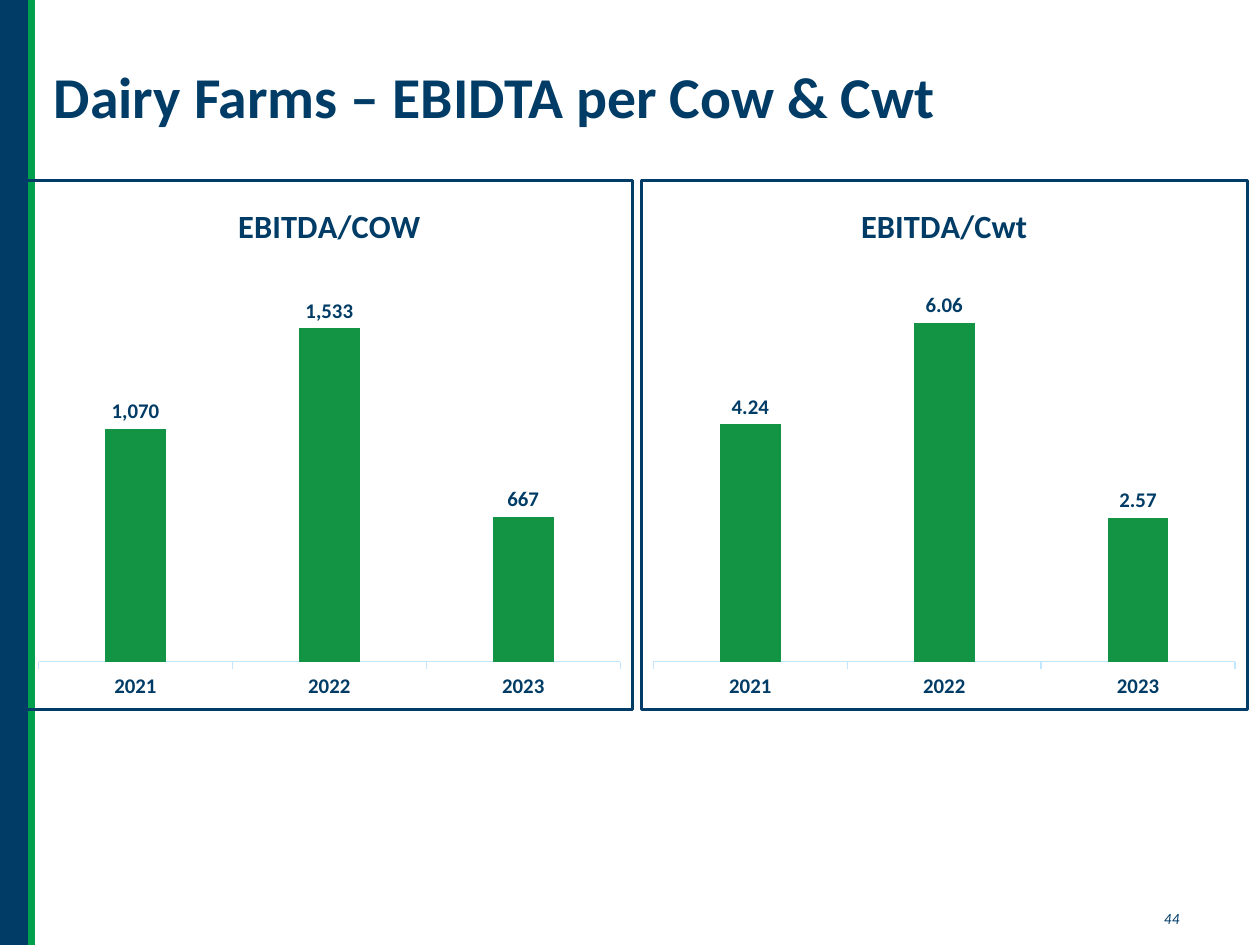
from lxml import etree
from pptx import Presentation
from pptx.chart.data import CategoryChartData as Data
from pptx.dml.color import RGBColor
from pptx.enum.chart import XL_CHART_TYPE as Kind, XL_LABEL_POSITION as Spot
from pptx.enum.chart import XL_TICK_LABEL_POSITION as Tick, XL_TICK_MARK as Mark
from pptx.enum.shapes import MSO_CONNECTOR as Wire, MSO_SHAPE as Form
from pptx.enum.text import MSO_ANCHOR as Anchor
from pptx.oxml import parse_xml
from pptx.oxml.ns import nsdecls, qn
from pptx.util import Inches, Pt

NAVY, GREEN, BAR, PALE = "003C66", "009F4D", "139445", "C2E6FF"
WIDE, HIGH = 10, 7.5
PLOT = {"x": 0.02, "y": 0.17, "w": 0.96, "h": 0.74}


def tint(code):
    return RGBColor.from_string(code)


class Page:
    def __init__(self, deck):
        self.deck = deck
        deck.slide_width, deck.slide_height = Inches(WIDE), Inches(HIGH)
        self.shapes = deck.slides.add_slide(deck.slide_layouts[6]).shapes

    def span(self, *parts):
        sizes = (self.deck.slide_width, self.deck.slide_height) * 2
        return [int(size * part) for size, part in zip(sizes, parts)]

    def style(self, font, size, bold=True, face="Calibri"):
        font.name, font.size, font.bold = face, Pt(size), bold
        font.color.rgb = tint(NAVY)

    def block(self, box, code):
        shape = self.shapes.add_shape(Form.RECTANGLE, *self.span(*box))
        shape.shadow.inherit = False
        shape.fill.solid()
        shape.fill.fore_color.rgb = tint(code)
        shape.line.fill.background()

    def line(self, ends, code, width):
        wire = self.shapes.add_connector(Wire.STRAIGHT, *self.span(*ends))
        wire.line.color.rgb = tint(code)
        wire.line.width = Pt(width)
        etree.SubElement(wire.element.spPr, qn("a:effectLst"))

    def text(self, box, words, size, bold=True, face="Calibri", slant=False):
        frame = self.shapes.add_textbox(*self.span(*box)).text_frame
        frame.word_wrap = True
        frame.vertical_anchor = Anchor.MIDDLE
        para = frame.paragraphs[0]
        para.text = words
        para.line_spacing = 0.9
        self.style(para.font, size, bold, face)
        para.font.italic = slant

    def chart(self, box, name, vals, top, form):
        data = Data(number_format=form)
        data.categories = ["2021", "2022", "2023"]
        data.add_series(name, vals)
        chart = self.shapes.add_chart(Kind.COLUMN_CLUSTERED, *self.span(*box), data).chart
        self.style(chart.font, 10, False)
        chart.has_legend = False
        chart.has_title = True
        para = chart.chart_title.text_frame.paragraphs[0]
        para.text = name
        self.style(para.font, 18.6)
        chart.chart_title.include_in_layout = False
        self.axes(chart, top)
        self.bars(chart.plots[0], form)
        self.frame(chart)

    def axes(self, chart, top):
        years, scale = chart.category_axis, chart.value_axis
        self.style(years.tick_labels.font, 12)
        years.major_tick_mark = Mark.OUTSIDE
        years.tick_label_position = Tick.LOW
        years.format.line.color.rgb = tint(PALE)
        years.format.line.width = Pt(0.75)
        scale.minimum_scale, scale.maximum_scale = 0, top
        scale.has_major_gridlines = False
        scale.visible = False

    def bars(self, plot, form):
        plot.gap_width, plot.overlap = 219, -27
        plot.vary_by_categories = False
        fill = plot.series[0].format.fill
        fill.solid()
        fill.fore_color.rgb = tint(BAR)
        plot.has_data_labels = True
        labels = plot.data_labels
        labels.show_value = True
        labels.position = Spot.OUTSIDE_END
        labels.number_format = form
        labels.number_format_is_linked = False
        self.style(labels.font, 12)

    def frame(self, chart):
        root = chart.element
        border = parse_xml(
            f'<c:spPr {nsdecls("c", "a")}><a:noFill/><a:ln w="{Pt(1.5)}"><a:solidFill>'
            f'<a:srgbClr val="{NAVY}"/></a:solidFill></a:ln></c:spPr>')
        root.find(qn("c:txPr")).addprevious(border)
        area = root.find(".//" + qn("c:plotArea"))
        for old in area.findall(qn("c:layout")):
            area.remove(old)
        rules = "".join(f'<c:{key} val="{val}"/>' for key, val in PLOT.items())
        area.insert(0, parse_xml(
            f'<c:layout {nsdecls("c")}><c:manualLayout><c:layoutTarget val="inner"/>'
            f'<c:xMode val="edge"/><c:yMode val="edge"/>{rules}</c:manualLayout></c:layout>'))


def main():
    deck = Presentation()
    page = Page(deck)
    edge = 0.25 / WIDE
    page.text((9.14 / WIDE, 7.18 / HIGH, 0.45 / WIDE, 0.24 / HIGH), "44", 8, False, "Lato", True)
    page.block((0, 0, edge, 1), NAVY)
    page.line((edge, 0, edge, 1), GREEN, 4.5)
    page.text((0.33 / WIDE, 0.33 / HIGH, 0.95, 0.92 / HIGH), "Dairy Farms – EBIDTA per Cow & Cwt", 33)
    charts = [("EBITDA/COW", (1070, 1533, 667), 1800, "#,##0"),
              ("EBITDA/Cwt", (4.24, 6.06, 2.57), 7, "0.00")]
    for col, spec in enumerate(charts):
        left = (0.2 + 4.88 * col) / WIDE
        page.chart((left, 1.42 / HIGH, 4.83 / WIDE, 4.22 / HIGH), *spec)
    deck.save("out.pptx")


if __name__ == "__main__":
    main()
